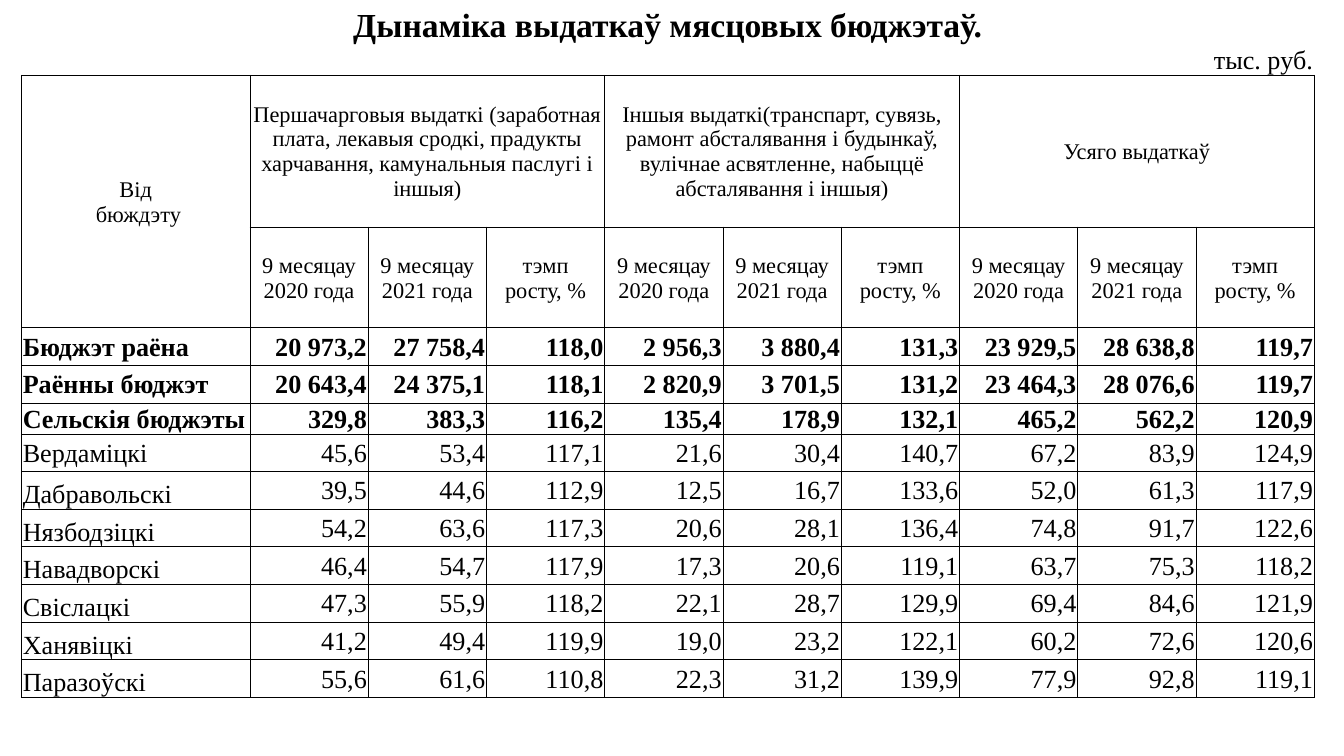
from lxml import etree
from pptx import Presentation
from pptx.dml.color import RGBColor
from pptx.enum import text
from pptx.oxml import ns
from pptx.util import Inches, Pt

FONT = "Times New Roman"
INK = "000000"
LEFT, MID, RIGHT = text.PP_ALIGN.LEFT, text.PP_ALIGN.CENTER, text.PP_ALIGN.RIGHT
LOW = text.MSO_ANCHOR.BOTTOM


def put(cell, words, size, align, bold=False, anchor=text.MSO_ANCHOR.MIDDLE):
    cell.text = words
    cell.vertical_anchor = anchor
    for par in cell.text_frame.paragraphs:
        par.alignment = align
        par.font.name = FONT
        par.font.size = Pt(size)
        par.font.bold = bold
        par.font.color.rgb = RGBColor.from_string(INK)


def rule(cell, sides):
    props = cell._tc.get_or_add_tcPr()
    for side in sides:
        line = etree.SubElement(props, ns.qn("a:ln" + side), w=str(Pt(0.5)))
        fill = etree.SubElement(line, ns.qn("a:solidFill"))
        etree.SubElement(fill, ns.qn("a:srgbClr"), val=INK)


heads = [
    "Першачарговыя выдаткі (заработная плата, лекавыя сродкі, прадукты харчавання, камунальныя паслугі і іншыя)",
    "Іншыя выдаткі(транспарт, сувязь, рамонт абсталявання і будынкаў, вулічнае асвятленне, набыццё абсталявання і іншыя)",
    "Усяго выдаткаў",
]
subs = ["9 месяцау\n2020 года"] + [
    "9 месяцау 2021 года", "тэмп\nросту, %", "9 месяцау 2020 года"] * 3
data = [
    "Бюджэт раёна|20 973,2|27 758,4|118,0|2 956,3|3 880,4|131,3|23 929,5|28 638,8|119,7",
    "Раённы бюджэт|20 643,4|24 375,1|118,1|2 820,9|3 701,5|131,2|23 464,3|28 076,6|119,7",
    "Сельскія бюджэты|329,8|383,3|116,2|135,4|178,9|132,1|465,2|562,2|120,9",
    "Вердаміцкі|45,6|53,4|117,1|21,6|30,4|140,7|67,2|83,9|124,9",
    "Дабравольскі|39,5|44,6|112,9|12,5|16,7|133,6|52,0|61,3|117,9",
    "Нязбодзіцкі|54,2|63,6|117,3|20,6|28,1|136,4|74,8|91,7|122,6",
    "Навадворскі|46,4|54,7|117,9|17,3|20,6|119,1|63,7|75,3|118,2",
    "Свіслацкі|47,3|55,9|118,2|22,1|28,7|129,9|69,4|84,6|121,9",
    "Ханявіцкі|41,2|49,4|119,9|19,0|23,2|122,1|60,2|72,6|120,6",
    "Паразоўскі|55,6|61,6|110,8|22,3|31,2|139,9|77,9|92,8|119,1",
]
wide = [1.7] + [0.88] * 9
high = [0.3, 0.23, 1.13, 0.75, 0.28, 0.28, 0.23] + [0.28] * 7

# Slide, 16:9
deck = Presentation()
deck.slide_width = Inches(10)
deck.slide_height = Inches(10) * 9 // 16
slide = deck.slides.add_slide(deck.slide_layouts[6])

# Table grid, with no style of its own
frame = slide.shapes.add_table(len(high), len(wide), Inches(0.16), Inches(0.03),
                               Inches(sum(wide)), Inches(sum(high)))
table = frame.table
table.first_row = table.horz_banding = False
style = table._tbl.tblPr.find(ns.qn("a:tableStyleId"))
style.text = "{2D5ABB26-0587-4C30-8999-92F81FD0307C}"
for col, width in zip(table.columns, wide):
    col.width = Inches(width)
for row, height in zip(table.rows, high):
    row.height = Inches(height)

# Margins, borders and fills
for r, row in enumerate(table.rows):
    for cell in row.cells:
        cell.margin_left = cell.margin_right = cell.margin_top = Inches(0.01)
        cell.margin_bottom = 0
        rule(cell, "LRTB" if r > 1 else "B" * r)
        cell.fill.background()

# Title and unit
table.cell(0, 0).merge(table.cell(0, 9))
put(table.cell(0, 0), "Дынаміка выдаткаў мясцовых бюджэтаў.", 18, MID, True, LOW)
for c in (1, 3, 5):
    table.cell(1, c).merge(table.cell(1, c + 1))
for c in range(9):
    par = table.cell(1, c).text_frame.paragraphs[0]
    etree.SubElement(par._p, ns.qn("a:endParaRPr"), sz="1200")
put(table.cell(1, 9), "тыс. руб.", 14, RIGHT, anchor=LOW)

# Column heads
table.cell(2, 0).merge(table.cell(3, 0))
put(table.cell(2, 0), "Від\n бюждэту", 12, MID)
for c, head in zip((1, 4, 7), heads):
    table.cell(2, c).merge(table.cell(2, c + 2))
    put(table.cell(2, c), head, 12, MID)
for c, sub in enumerate(subs[:9], 1):
    put(table.cell(3, c), sub, 12, MID)

# Budgets: three bold totals, then the village councils
for r, line in enumerate(data):
    name, *sums = line.split("|")
    bold = r < 3
    anchor = LOW if r > 3 else text.MSO_ANCHOR.MIDDLE
    put(table.cell(r + 4, 0), name, 14, LEFT, bold, anchor)
    for c, value in enumerate(sums, 1):
        put(table.cell(r + 4, c), value, 14, RIGHT, bold)

deck.save("out.pptx")
